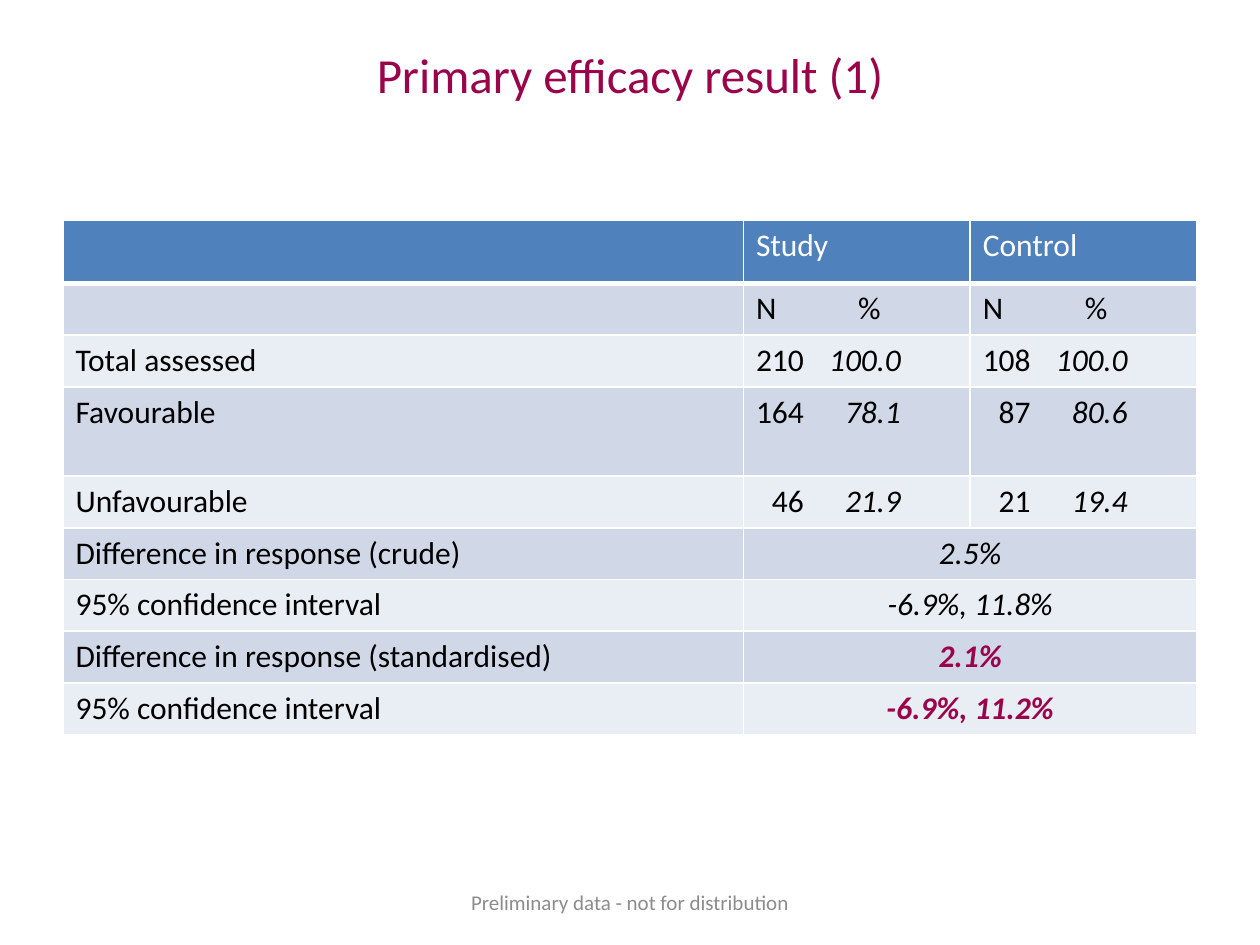
"""Build a slide with the primary efficacy results of a study."""
import dataclasses
import typing

import lxml.etree
import pptx
import pptx.dml.color
import pptx.enum.text
import pptx.oxml.ns
import pptx.util

RGB = pptx.dml.color.RGBColor
ALIGN = pptx.enum.text.PP_ALIGN
ANCHOR = pptx.enum.text.MSO_ANCHOR
qn = pptx.oxml.ns.qn

WINE = RGB(0x9A, 0x04, 0x4B)
BLUE = RGB(0x4F, 0x81, 0xBD)
DARK = RGB(0xD0, 0xD8, 0xE8)
LIGHT = RGB(0xE9, 0xED, 0xF4)
WHITE = RGB(0xFF, 0xFF, 0xFF)
BLACK = RGB(0x00, 0x00, 0x00)
GREY = RGB(0x8C, 0x8C, 0x8C)

WIDE = pptx.util.Inches(10)
HIGH = pptx.util.Inches(7.5)
COLS = (5.4, 1.8, 1.8)
HEAD, LINE, TALL = 0.5, 0.41, 0.71
COUNT = (("r", 0.38), ("r", 1.15))
UNITS = (("ctr", 0.9),)


@dataclasses.dataclass(frozen=True)
class Label:
    """A line of text placed by shares of the slide's size."""
    text: str
    left: float
    top: float
    width: float
    height: float
    size: int
    color: RGB
    anchor: ANCHOR


@dataclasses.dataclass(frozen=True)
class Row:
    """A table row whose pairs hold a count and a percentage per arm."""
    name: str
    pairs: tuple[tuple[str, str], ...] = ()
    joint: str = ""
    key: bool = False
    height: float = LINE


LABELS = (
    Label("Primary efficacy result (1)", 0.05, 0.04, 0.9, 0.17, 28, WINE, ANCHOR.TOP),
    Label("Preliminary data - not for distribution", 0.34, 0.93, 0.32, 0.05, 12, GREY,
          ANCHOR.MIDDLE),
)
ROWS = (
    Row("Total assessed", (("210", "100.0"), ("108", "100.0"))),
    Row("Favourable", (("164", "78.1"), ("87", "80.6")), height=TALL),
    Row("Unfavourable", (("46", "21.9"), ("21", "19.4"))),
    Row("Difference in response (crude)", joint="2.5%"),
    Row("95% confidence interval", joint="-6.9%, 11.8%"),
    Row("Difference in response (standardised)", joint="2.1%", key=True),
    Row("95% confidence interval", joint="-6.9%, 11.2%", key=True),
)


def style(para: typing.Any, size: int, color: RGB) -> None:
    """Set the font of a paragraph."""
    para.font.name = "Calibri"
    para.font.size = pptx.util.Pt(size)
    para.font.color.rgb = color


def label(slide: typing.Any, item: Label) -> None:
    """Draw a centred text box."""
    box = slide.shapes.add_textbox(
        int(item.left * WIDE), int(item.top * HIGH),
        int(item.width * WIDE), int(item.height * HIGH))
    frame = box.text_frame
    frame.word_wrap = True
    frame.vertical_anchor = item.anchor
    para = frame.paragraphs[0]
    para.text = item.text
    para.alignment = ALIGN.CENTER
    style(para, item.size, item.color)


def paint(cell: typing.Any, fill: RGB, base: int = 1) -> None:
    """Give a cell its white borders and its fill."""
    props = cell._tc.get_or_add_tcPr()
    for side, width in (("L", 1), ("R", 1), ("T", 1), ("B", base)):
        line = lxml.etree.SubElement(
            props, qn(f"a:ln{side}"), w=str(pptx.util.Pt(width)))
        solid = lxml.etree.SubElement(line, qn("a:solidFill"))
        lxml.etree.SubElement(solid, qn("a:srgbClr"), val=str(WHITE))
    cell.fill.solid()
    cell.fill.fore_color.rgb = fill


def write(cell: typing.Any, text: str, color: RGB = BLACK) -> typing.Any:
    """Write one styled paragraph into a cell and return it."""
    para = cell.text_frame.paragraphs[0]
    para.text = text
    style(para, 18, color)
    return para


def stops(para: typing.Any, tabs: tuple[tuple[str, float], ...]) -> None:
    """Add tab stops to a paragraph."""
    group = lxml.etree.Element(qn("a:tabLst"))
    for kind, place in tabs:
        lxml.etree.SubElement(
            group, qn("a:tab"), pos=str(pptx.util.Inches(place)), algn=kind)
    para._p.get_or_add_pPr().insert(0, group)


def fill_row(cells: list[typing.Any], row: Row) -> None:
    """Write a result row, joining the arms where they share a value."""
    write(cells[0], row.name)
    for cell, (count, share) in zip(cells[1:], row.pairs):
        para = write(cell, f"\t{count}\t")
        para.add_run().text = share
        para.runs[-1].font.italic = True
        stops(para, COUNT)
    if row.joint:
        cells[1].merge(cells[2])
        para = write(cells[1], row.joint, WINE if row.key else BLACK)
        para.alignment = ALIGN.CENTER
        para.font.italic = True
        para.font.bold = row.key


def results(slide: typing.Any) -> None:
    """Draw the table of results."""
    tall = (HEAD, LINE, *(row.height for row in ROWS))
    table = slide.shapes.add_table(
        len(tall), len(COLS), int(0.05 * WIDE), pptx.util.Inches(1.75),
        pptx.util.Inches(sum(COLS)), pptx.util.Inches(sum(tall))).table
    table.first_row = table.horz_banding = False
    for col, width in zip(table.columns, COLS):
        col.width = pptx.util.Inches(width)
    grid = []
    for num, (line, height) in enumerate(zip(table.rows, tall)):
        line.height = pptx.util.Inches(height)
        grid.append(list(line.cells))
        for cell in grid[-1]:
            if num == 0:
                paint(cell, BLUE, 3)
            else:
                paint(cell, DARK if num % 2 else LIGHT)
    for col, arm in enumerate(("Study", "Control"), 1):
        write(grid[0][col], arm, WHITE)
        stops(write(grid[1][col], "N\t%"), UNITS)
    for cells, row in zip(grid[2:], ROWS):
        fill_row(cells, row)


def main() -> None:
    """Build and save the slide."""
    deck = pptx.Presentation()
    deck.slide_width, deck.slide_height = WIDE, HIGH
    slide = deck.slides.add_slide(deck.slide_layouts[6])
    results(slide)
    for item in LABELS:
        label(slide, item)
    deck.save("out.pptx")


if __name__ == "__main__":
    main()
